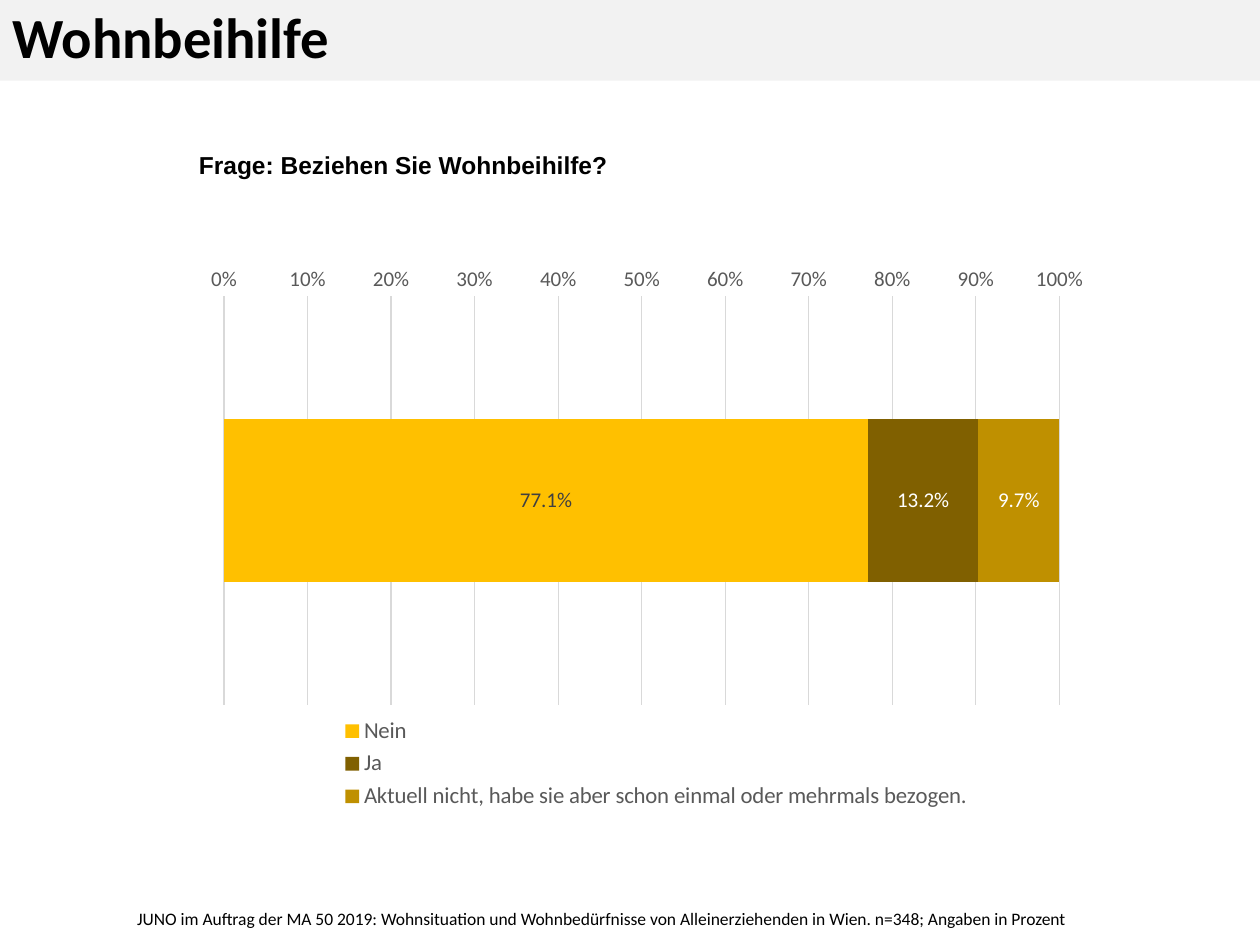
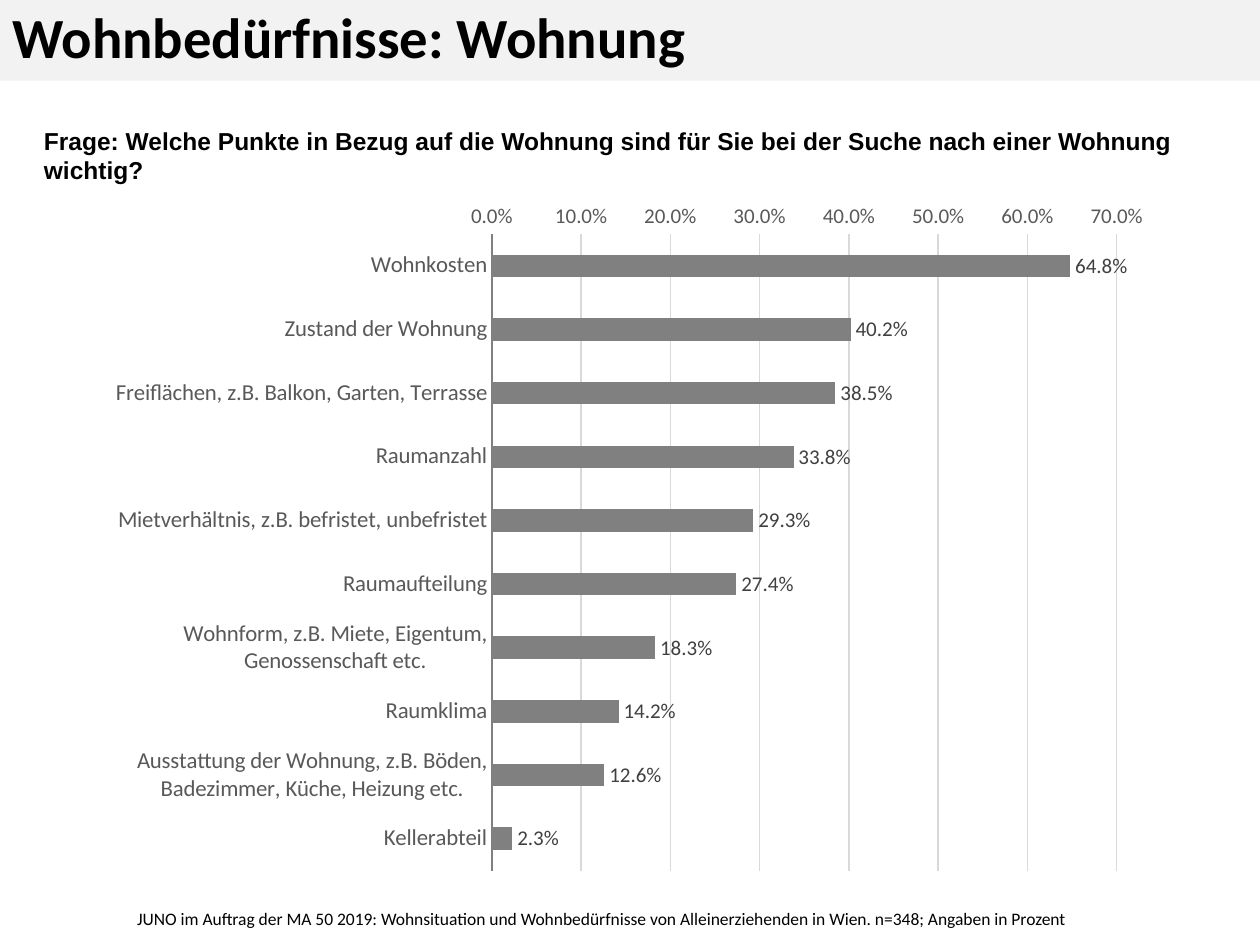
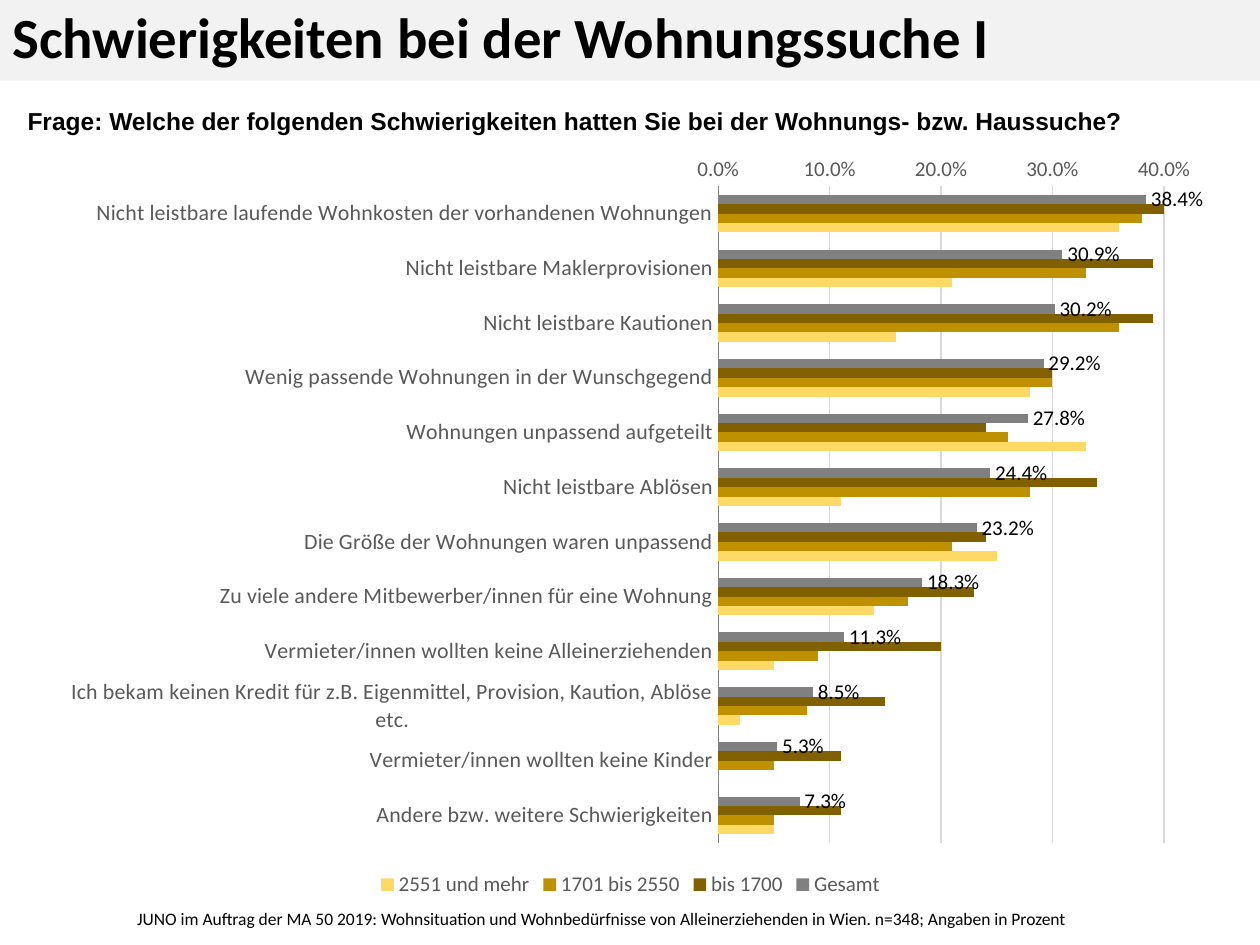
from lxml import etree
from pptx import Presentation
from pptx import util as u
from pptx.chart.data import CategoryChartData
from pptx.dml.color import RGBColor
from pptx.enum import chart as charts, shapes, text
from pptx.oxml import ns

# Shared style
BLACK, WHITE, BAND = "000000", "FFFFFF", "F2F2F2"
GREY, AXIS_TEXT, LABEL_TEXT, GRID = "808080", "595959", "404040", "D9D9D9"
GOLD, DARK_GOLD, OCHRE, LIGHT_GOLD = "FFC000", "806000", "BF9000", "FFD966"
BODY_FONT, QUESTION_FONT = "Calibri", "Arial"
PERCENT = "0.0%"
SOURCE = ("JUNO im Auftrag der MA 50 2019: Wohnsituation und Wohnbedürfnisse von "
          "Alleinerziehenden in Wien. n=348; Angaben in Prozent")


def color(hex_string):
    return RGBColor.from_string(hex_string)


def style_font(font, size, hex_string=BLACK, name=BODY_FONT, bold=False):
    font.name, font.size, font.bold = name, u.Pt(size), bold
    font.color.rgb = color(hex_string)


def inches(*lengths):
    return [u.Inches(length) for length in lengths]


# Text elements
def add_text(slide, box, words, size, name=BODY_FONT, bold=False):
    frame = slide.shapes.add_textbox(*inches(*box)).text_frame
    frame.word_wrap = True
    run = frame.paragraphs[0].add_run()
    run.text = words
    style_font(run.font, size, name=name, bold=bold)


def add_title(slide, title):
    band = slide.shapes.add_shape(shapes.MSO_SHAPE.RECTANGLE, *inches(0, 0, 10.05, 0.64))
    band.shadow.inherit = False
    band.fill.solid()
    band.fill.fore_color.rgb = color(BAND)
    band.line.fill.background()
    band.text_frame.vertical_anchor = text.MSO_ANCHOR.MIDDLE
    paragraph = band.text_frame.paragraphs[0]
    paragraph.alignment = text.PP_ALIGN.LEFT
    paragraph.line_spacing = 0.9
    run = paragraph.add_run()
    run.text = title
    style_font(run.font, 32.4, bold=True)


def add_survey_slide(presentation, title, question, question_box):
    slide = presentation.slides.add_slide(presentation.slide_layouts[6])
    add_title(slide, title)
    add_text(slide, question_box, question, 14, QUESTION_FONT, bold=True)
    add_text(slide, (0.99, 7.16, 8.38, 0.27), SOURCE, 10)
    return slide


# Chart elements
def add_bar_chart(slide, box, categories, series, gap, stacked=False, category_size=13,
                  axis_format=PERCENT):
    """Each series is (name, values, fill, label colour or None)."""
    data = CategoryChartData(number_format=PERCENT)
    data.categories = categories
    for name, values, _, _ in series:
        data.add_series(name, values)
    kinds = charts.XL_CHART_TYPE
    kind = kinds.BAR_STACKED_100 if stacked else kinds.BAR_CLUSTERED
    chart = slide.shapes.add_chart(kind, *inches(*box), data).chart
    chart.has_title = False
    chart.has_legend = False
    style_font(chart.font, 10)

    plot = chart.plots[0]
    plot.gap_width = gap
    plot.overlap = 100 if stacked else 0
    plot.vary_by_categories = False
    positions = charts.XL_LABEL_POSITION
    position = positions.CENTER if stacked else positions.OUTSIDE_END
    for bars, (_, _, fill, label_color) in zip(plot.series, series):
        bars.format.fill.solid()
        bars.format.fill.fore_color.rgb = color(fill)
        bars.invert_if_negative = False
        if label_color:
            add_labels(bars.data_labels, label_color, position)

    style_category_axis(chart.category_axis, category_size)
    style_value_axis(chart.value_axis, axis_format)
    return chart


def add_labels(labels, label_color, position):
    labels.show_value = True
    labels.number_format = PERCENT
    labels.number_format_is_linked = False
    labels.position = position
    style_font(labels.font, 12, label_color)


def style_category_axis(axis, size):
    axis.reverse_order = True
    axis.major_tick_mark = charts.XL_TICK_MARK.NONE
    axis.format.line.color.rgb = color(GREY)
    axis.format.line.width = u.Pt(0.75)
    style_font(axis.tick_labels.font, size, AXIS_TEXT)


def style_value_axis(axis, number_format):
    axis.minimum_scale = 0
    axis.major_tick_mark = charts.XL_TICK_MARK.NONE
    axis.format.line.fill.background()
    axis.has_major_gridlines = True
    grid_line = axis.major_gridlines.format.line
    grid_line.color.rgb = color(GRID)
    grid_line.width = u.Pt(0.75)
    axis.tick_labels.number_format = number_format
    axis.tick_labels.number_format_is_linked = False
    style_font(axis.tick_labels.font, 12, AXIS_TEXT)


def add_legend(chart, size):
    chart.has_legend = True
    chart.legend.position = charts.XL_LEGEND_POSITION.BOTTOM
    chart.legend.include_in_layout = False
    style_font(chart.legend.font, size, AXIS_TEXT)


def place_plot(chart, x, y, width, height):
    """Fix the inner plot area, in fractions of the chart."""
    plot_area = chart.element.find(".//" + ns.qn("c:plotArea"))
    for layout in plot_area.findall(ns.qn("c:layout")):
        plot_area.remove(layout)
    layout = etree.Element(ns.qn("c:layout"))
    manual = etree.SubElement(layout, ns.qn("c:manualLayout"))
    settings = [("layoutTarget", "inner"), ("xMode", "edge"), ("yMode", "edge"),
                ("x", x), ("y", y), ("w", width), ("h", height)]
    for tag, value in settings:
        etree.SubElement(manual, ns.qn("c:" + tag)).set("val", str(value))
    plot_area.insert(0, layout)


# Slides
def add_housing_benefit(presentation):
    slide = add_survey_slide(presentation, "Wohnbeihilfe",
                             "Frage: Beziehen Sie Wohnbeihilfe?", (1.48, 1.14, 9.25, 0.34))
    answers = [
        ("Nein", [0.771], GOLD, LABEL_TEXT),
        ("Ja", [0.132], DARK_GOLD, WHITE),
        ("Aktuell nicht, habe sie aber schon einmal oder mehrmals bezogen.",
         [0.097], OCHRE, WHITE),
    ]
    chart = add_bar_chart(slide, (1.48, 2.09, 7.45, 4.38), ["1"], answers, gap=150,
                          stacked=True, axis_format="0%")
    chart.category_axis.visible = False
    add_legend(chart, 13)
    place_plot(chart, 0.04, 0.06, 0.89, 0.74)


def add_housing_needs(presentation):
    slide = add_survey_slide(
        presentation, "Wohnbedürfnisse: Wohnung",
        "Frage: Welche Punkte in Bezug auf die Wohnung sind für Sie bei der Suche "
        "nach einer Wohnung wichtig?", (0.25, 0.95, 9.25, 0.57))
    needs = {
        "Wohnkosten": 0.648,
        "Zustand der Wohnung": 0.402,
        "Freiflächen, z.B. Balkon, Garten, Terrasse": 0.385,
        "Raumanzahl": 0.338,
        "Mietverhältnis, z.B. befristet, unbefristet": 0.293,
        "Raumaufteilung": 0.274,
        "Wohnform, z.B. Miete, Eigentum, Genossenschaft etc.": 0.183,
        "Raumklima": 0.142,
        "Ausstattung der Wohnung, z.B. Böden, Badezimmer, Küche, Heizung etc.": 0.126,
        "Kellerabteil": 0.023,
    }
    add_bar_chart(slide, (0.75, 1.51, 8.49, 5.51), list(needs),
                  [("Series 1", list(needs.values()), GREY, LABEL_TEXT)], gap=182)


def add_search_difficulties(presentation):
    slide = add_survey_slide(
        presentation, "Schwierigkeiten bei der Wohnungssuche I",
        "Frage: Welche der folgenden Schwierigkeiten hatten Sie bei der Wohnungs- "
        "bzw. Haussuche?", (0.12, 0.79, 9.25, 0.34))
    # Columns: total, then income up to 1700, 1701 to 2550, 2551 and more
    difficulties = {
        "Nicht leistbare laufende Wohnkosten der vorhandenen Wohnungen":
            (0.384, 0.42, 0.38, 0.36),
        "Nicht leistbare Maklerprovisionen": (0.309, 0.39, 0.33, 0.21),
        "Nicht leistbare Kautionen": (0.302, 0.39, 0.36, 0.16),
        "Wenig passende Wohnungen in der Wunschgegend": (0.292, 0.3, 0.3, 0.28),
        "Wohnungen unpassend aufgeteilt": (0.278, 0.24, 0.26, 0.33),
        "Nicht leistbare Ablösen": (0.244, 0.34, 0.28, 0.11),
        "Die Größe der Wohnungen waren unpassend": (0.232, 0.24, 0.21, 0.25),
        "Zu viele andere Mitbewerber/innen für eine Wohnung": (0.183, 0.23, 0.17, 0.14),
        "Vermieter/innen wollten keine Alleinerziehenden": (0.113, 0.2, 0.09, 0.05),
        "Ich bekam keinen Kredit für z.B. Eigenmittel, Provision, Kaution, Ablöse etc.":
            (0.085, 0.15, 0.08, 0.02),
        "Vermieter/innen wollten keine Kinder": (0.053, 0.11, 0.05, 0),
        "Andere bzw. weitere Schwierigkeiten": (0.073, 0.11, 0.05, 0.05),
    }
    groups = [("Gesamt", GREY, BLACK), ("bis 1700", DARK_GOLD, None),
              ("1701 bis 2550", OCHRE, None), ("2551 und mehr", LIGHT_GOLD, None)]
    series = [(name, values, fill, label_color) for (name, fill, label_color), values
              in zip(groups, zip(*difficulties.values()))]
    chart = add_bar_chart(slide, (0.38, 1.12, 9.25, 6.04), list(difficulties), series,
                          gap=182, category_size=12.5)
    chart.value_axis.maximum_scale = 0.4
    chart.value_axis.major_unit = 0.1
    add_legend(chart, 12)


def main():
    presentation = Presentation()
    presentation.slide_width, presentation.slide_height = inches(10, 7.5)
    add_housing_benefit(presentation)
    add_housing_needs(presentation)
    add_search_difficulties(presentation)
    presentation.save("out.pptx")


if __name__ == "__main__":
    main()
